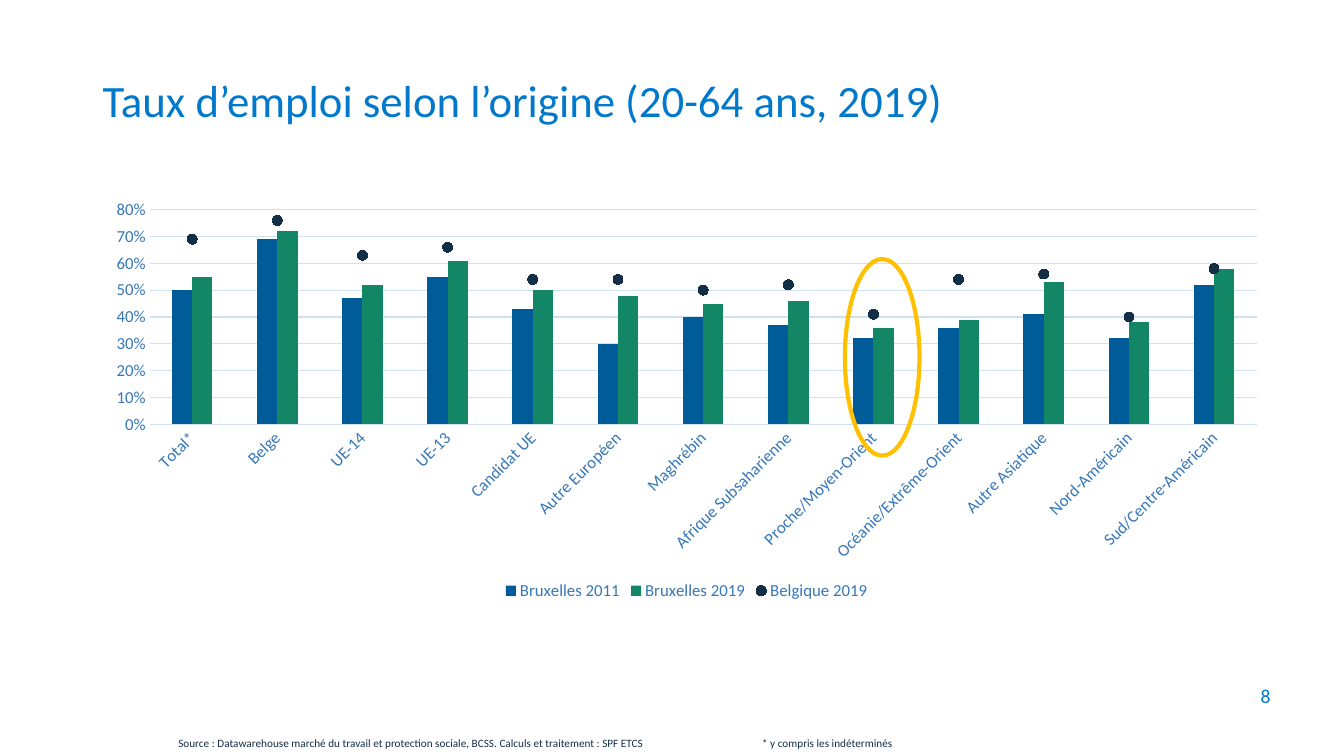
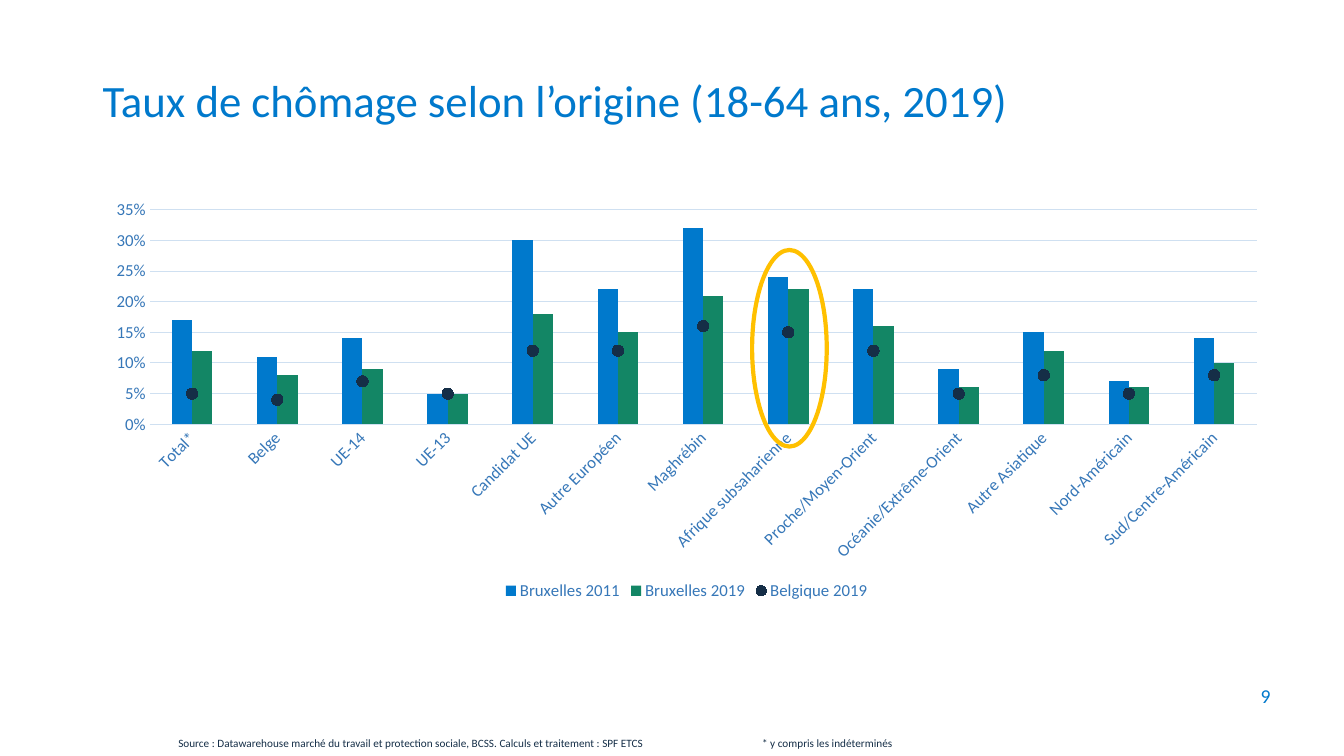
import pptx
import pptx.chart.data
import pptx.dml.color
import pptx.enum.chart
import pptx.enum.shapes
import pptx.enum.text
import pptx.oxml
import pptx.oxml.ns
import pptx.util

Inches = pptx.util.Inches
Pt = pptx.util.Pt
RGBColor = pptx.dml.color.RGBColor
Align = pptx.enum.text.PP_ALIGN
Anchor = pptx.enum.text.MSO_ANCHOR

# Shared style
FONT = "Calibri"
BLUE = RGBColor(0x00, 0x79, 0xCC)
DARK_BLUE = RGBColor(0x00, 0x5B, 0x99)
LABEL_BLUE = RGBColor(0x36, 0x77, 0xB8)
GRID_BLUE = RGBColor(0xCF, 0xE0, 0xF1)
GREEN = RGBColor(0x13, 0x86, 0x65)
NAVY = RGBColor(0x15, 0x2E, 0x47)
AMBER = RGBColor(0xFF, 0xC0, 0x00)

SOURCE = ("Source : Datawarehouse marché du travail et protection sociale, BCSS. "
          "Calculs et traitement : SPF ETCS")
FOOTNOTE = "* y compris les indéterminés"
SERIES_NAMES = ["Bruxelles 2011", "Bruxelles 2019", "Belgique 2019"]

# Content of each slide
SLIDES = [
    {
        "number": 8,
        "title": "Taux d’emploi selon l’origine (20-64 ans, 2019)",
        "africa": "Afrique Subsaharienne",
        "values": [
            [0.5, 0.69, 0.47, 0.55, 0.43, 0.3, 0.4, 0.37, 0.32, 0.36, 0.41, 0.32, 0.52],
            [0.55, 0.72, 0.52, 0.61, 0.5, 0.48, 0.45, 0.46, 0.36, 0.39, 0.53, 0.38, 0.58],
            [0.69, 0.76, 0.63, 0.66, 0.54, 0.54, 0.5, 0.52, 0.41, 0.54, 0.56, 0.4, 0.58],
        ],
        "first_color": DARK_BLUE,
        "maximum": 0.8,
        "step": 0.1,
        "marker_size": 7,
        "highlight": (8.38, 2.57),
    },
    {
        "number": 9,
        "title": "Taux de chômage selon l’origine (18-64 ans, 2019)",
        "africa": "Afrique subsaharienne",
        "values": [
            [0.17, 0.11, 0.14, 0.05, 0.3, 0.22, 0.32, 0.24, 0.22, 0.09, 0.15, 0.07, 0.14],
            [0.12, 0.08, 0.09, 0.05, 0.18, 0.15, 0.21, 0.22, 0.16, 0.06, 0.12, 0.06, 0.1],
            [0.05, 0.04, 0.07, 0.05, 0.12, 0.12, 0.16, 0.15, 0.12, 0.05, 0.08, 0.05, 0.08],
        ],
        "first_color": BLUE,
        "maximum": 0.35,
        "step": 0.05,
        "marker_size": 8,
        "highlight": (7.46, 2.48),
    },
]


def origins(africa):
    return ["Total*", "Belge", "UE-14", "UE-13", "Candidat UE", "Autre Européen",
            "Maghrébin", africa, "Proche/Moyen-Orient", "Océanie/Extrême-Orient",
            "Autre Asiatique", "Nord-Américain", "Sud/Centre-Américain"]


def style_font(font, size, color):
    font.name = FONT
    font.size = Pt(size)
    font.color.rgb = color


def add_text(page, text, area, size, color, anchor=Anchor.TOP, align=Align.LEFT,
             wrap=True, spacing=None):
    box = page.shapes.add_textbox(*map(Inches, area))
    frame = box.text_frame
    frame.word_wrap = wrap
    frame.vertical_anchor = anchor
    para = frame.paragraphs[0]
    para.alignment = align
    para.line_spacing = spacing
    span = para.add_run()
    span.text = text
    style_font(span.font, size, color)


def move_last_series_to_line(chart):
    """Turn the last column series into a line series on the same axes."""
    bar = chart._chartSpace.xpath(".//c:barChart")[0]
    series = bar.xpath("./c:ser")[-1]
    for flag in series.xpath("./c:invertIfNegative"):
        series.remove(flag)
    line = pptx.oxml.parse_xml(
        f'<c:lineChart {pptx.oxml.ns.nsdecls("c")}>'
        '<c:grouping val="standard"/><c:varyColors val="0"/><c:marker val="1"/>'
        + "".join(f'<c:axId val="{axis.get("val")}"/>' for axis in bar.xpath("./c:axId"))
        + "</c:lineChart>")
    line.insert(2, series)
    bar.addnext(line)


def style_axes(chart, maximum, step):
    tick_mark = pptx.enum.chart.XL_TICK_MARK.NONE
    category_axis, value_axis = chart.category_axis, chart.value_axis
    for axis in (category_axis, value_axis):
        axis.major_tick_mark = tick_mark
        axis.minor_tick_mark = tick_mark
        style_font(axis.tick_labels.font, 12, LABEL_BLUE)

    value_axis.minimum_scale = 0
    value_axis.maximum_scale = maximum
    value_axis.major_unit = step
    value_axis.tick_labels.number_format = "0%"
    value_axis.tick_labels.number_format_is_linked = False
    value_axis.format.line.fill.background()
    for line in (category_axis.format.line, value_axis.major_gridlines.format.line):
        line.color.rgb = GRID_BLUE
        line.width = Pt(0.75)

    # Slanted category labels
    chart._chartSpace.xpath(".//c:catAx/c:txPr/a:bodyPr")[0].set("rot", "-2700000")


def add_rate_chart(page, content):
    data = pptx.chart.data.CategoryChartData(number_format="0%")
    data.categories = origins(content["africa"])
    for name, values in zip(SERIES_NAMES, content["values"]):
        data.add_series(name, values)
    chart = page.shapes.add_chart(
        pptx.enum.chart.XL_CHART_TYPE.COLUMN_CLUSTERED,
        Inches(0.92), Inches(1.9), Inches(11.78), Inches(4.1), data).chart
    chart.has_title = False
    style_font(chart.font, 12, NAVY)
    move_last_series_to_line(chart)
    columns, dots = chart.plots

    # Columns for Brussels
    columns.gap_width = 219
    columns.overlap = 0
    columns.vary_by_categories = False
    for series, color in zip(columns.series, (content["first_color"], GREEN)):
        series.format.fill.solid()
        series.format.fill.fore_color.rgb = color

    # Dots for Belgium
    belgium = dots.series[0]
    belgium.smooth = False
    belgium.format.line.fill.background()
    marker = belgium.marker
    marker.style = pptx.enum.chart.XL_MARKER_STYLE.CIRCLE
    marker.size = content["marker_size"]
    marker.format.fill.solid()
    marker.format.fill.fore_color.rgb = NAVY
    marker.format.line.color.rgb = NAVY

    style_axes(chart, content["maximum"], content["step"])
    chart.has_legend = True
    chart.legend.position = pptx.enum.chart.XL_LEGEND_POSITION.BOTTOM
    chart.legend.include_in_layout = False
    style_font(chart.legend.font, 12, LABEL_BLUE)


def add_highlight(page, left, top):
    ring = page.shapes.add_shape(pptx.enum.shapes.MSO_SHAPE.OVAL, Inches(left),
                                 Inches(top), Inches(0.74), Inches(1.95))
    ring.shadow.inherit = False
    ring.fill.background()
    ring.line.color.rgb = AMBER
    ring.line.width = Pt(3)


def add_page(deck, content):
    page = deck.slides.add_slide(deck.slide_layouts[6])
    add_text(page, content["title"], (0.92, 0.3, 10.24, 1.45), 32, BLUE,
             anchor=Anchor.MIDDLE, spacing=0.9)
    add_rate_chart(page, content)
    add_highlight(page, *content["highlight"])

    # Footer
    add_text(page, str(content["number"]), (9.7, 6.7, 3, 0.4), 14, BLUE,
             anchor=Anchor.MIDDLE, align=Align.RIGHT)
    add_text(page, SOURCE, (1.67, 7.26, 5.07, 0.24), 8, NAVY)
    add_text(page, FOOTNOTE, (7.46, 7.26, 1.51, 0.24), 8, NAVY, wrap=False)


def main():
    deck = pptx.Presentation()
    deck.slide_width = Inches(13.33)
    deck.slide_height = Inches(7.5)
    for content in SLIDES:
        add_page(deck, content)
    deck.save("out.pptx")


if __name__ == "__main__":
    main()
